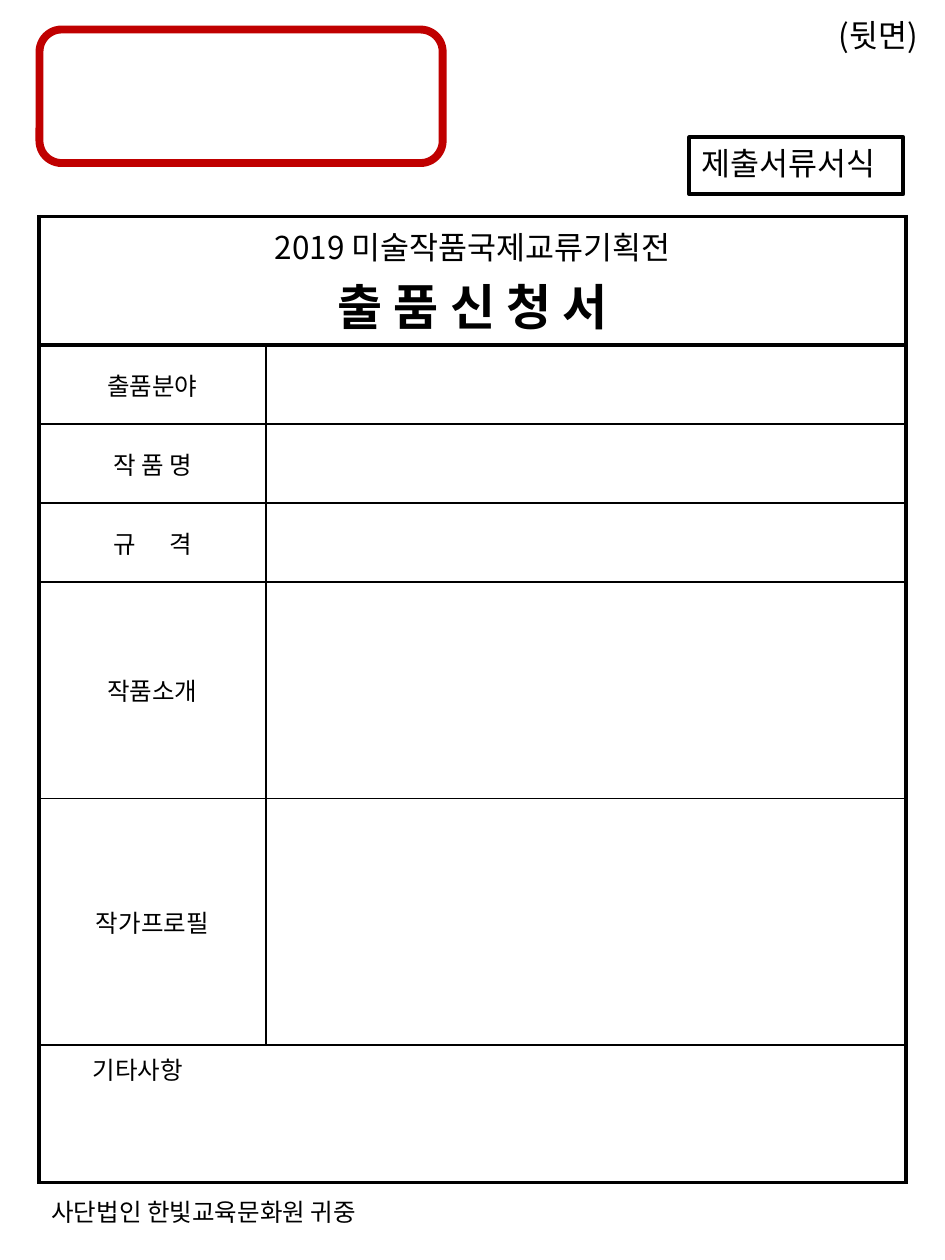
from lxml import etree
from pptx import Presentation
from pptx.dml.color import RGBColor
from pptx.enum.shapes import MSO_SHAPE
from pptx.enum.text import MSO_ANCHOR, MSO_AUTO_SIZE, PP_ALIGN
from pptx.oxml.ns import qn
from pptx.util import Pt

LEFT, CENTER = PP_ALIGN.LEFT, PP_ALIGN.CENTER
TOP, MIDDLE = MSO_ANCHOR.TOP, MSO_ANCHOR.MIDDLE
RECTANGLE, ROUNDED = MSO_SHAPE.RECTANGLE, MSO_SHAPE.ROUNDED_RECTANGLE
FIT_SHAPE = MSO_AUTO_SIZE.SHAPE_TO_FIT_TEXT
KOREAN = "Noto Sans CJK KR"
BLACK, RED = "000000", "C00000"
THICK, THIN = 2.25, 1


def color(hex_value):
    return RGBColor.from_string(hex_value)


def write(paragraph, text, size, align=LEFT, bold=False):
    paragraph.alignment = align
    run = paragraph.add_run()
    run.text = text
    font_format = {"name": KOREAN, "size": Pt(size), "bold": bold}
    for attribute, value in font_format.items():
        setattr(run.font, attribute, value)
    run.font.color.rgb = color(BLACK)
    properties = run.font._element
    etree.SubElement(properties, qn("a:ea"), typeface=KOREAN)
    return properties


form = Presentation()
form.slide_width, form.slide_height = Pt(540), Pt(720)
page = form.slides.add_slide(form.slide_layouts[6])

# Frame of the document label and the plain emblem frame
for preset, box, ink, weight in [
    (RECTANGLE, (393.84, 78.5, 122.4, 32.4), BLACK, THICK),
    (ROUNDED, (22.6, 16.9, 230.4, 76.3), RED, 4.5),
]:
    frame = page.shapes.add_shape(preset, *map(Pt, box))
    frame.shadow.inherit = False
    frame.fill.background()
    frame.line.color.rgb = color(ink)
    frame.line.width = Pt(weight)

# Label, recipient and page side
for text, size, box in [
    ("제출서류서식", 18, (393.84, 78.5, 122.4, 28.8)),
    ("사단법인 한빛교육문화원 귀중", 14, (22.3, 680.4, 206, 23.8)),
    ("(뒷면)", 18, (472.3, 5.8, 64.8, 28.8)),
]:
    note = page.shapes.add_textbox(*map(Pt, box)).text_frame
    note_format = {"word_wrap": True, "auto_size": FIT_SHAPE}
    for attribute, value in note_format.items():
        setattr(note, attribute, value)
    write(note.paragraphs[0], text, size)

# Application table: a title row, five entries and a remarks row
row_heights = [73.4, 45.1, 45.1, 45.1, 123.8, 140.8, 78.5]
column_widths = [129.6, 365.8]
last = len(row_heights) - 1
application = page.shapes.add_table(
    len(row_heights), 2, Pt(22.3), Pt(123.8), Pt(sum(column_widths)), Pt(sum(row_heights))
).table
application.first_row = application.horz_banding = False
for column, width in zip(application.columns, column_widths):
    column.width = Pt(width)
for row, height in zip(application.rows, row_heights):
    row.height = Pt(height)

# Thick outer edges and title edge, thin inner lines
for r in range(last + 1):
    spans = r in (0, last)
    for c in range(2):
        cell = application.cell(r, c)
        cell.fill.background()
        cell.vertical_anchor = TOP if spans else MIDDLE
        edges = {
            "a:lnL": THICK if c == 0 or spans else THIN,
            "a:lnR": THICK if c == 1 or spans else THIN,
            "a:lnT": THICK if r < 2 else THIN,
            "a:lnB": THICK if spans else THIN,
        }
        for position, (tag, weight) in enumerate(edges.items()):
            edge = etree.Element(qn(tag), w=str(Pt(weight)))
            paint = etree.SubElement(edge, qn("a:solidFill"))
            etree.SubElement(paint, qn("a:srgbClr"), val=BLACK)
            cell._tc.get_or_add_tcPr().insert(position, edge)
    if spans:
        application.cell(r, 0).merge(application.cell(r, 1))

# Title
title = application.cell(0, 0).text_frame
write(title.paragraphs[0], "2019 미술작품국제교류기획전", 18, CENTER)
write(title.add_paragraph(), "출 품 신 청 서", 28, CENTER, bold=True)

# Entry labels; the two letters of the size label are spread apart
for r, parts in enumerate(
    [["출품분야"], ["작 품 명"], ["규 ", "격"], ["작품소개"], ["작가프로필"]], start=1
):
    label = application.cell(r, 0).text_frame.paragraphs[0]
    for part in parts:
        properties = write(label, part, 14, CENTER)
        if part.endswith(" "):
            properties.set("spc", "800")

# Remarks
remarks = application.cell(last, 0).text_frame.paragraphs[0]
write(remarks, "기타사항", 14)
remarks._p.get_or_add_pPr().set("marL", str(Pt(23.5)))

form.save("out.pptx")
